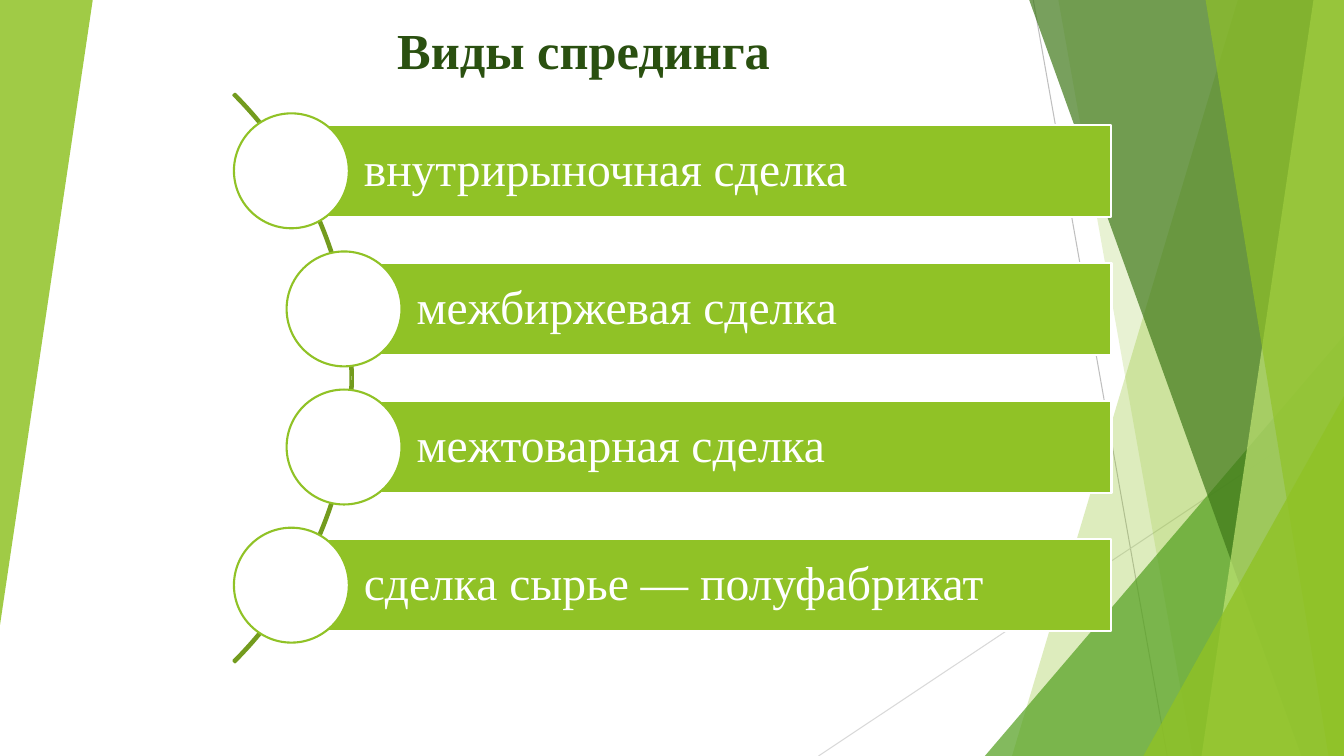
from dataclasses import dataclass

from pptx import Presentation
from pptx.dml.color import RGBColor
from pptx.enum.shapes import MSO_CONNECTOR, MSO_SHAPE
from pptx.enum.text import MSO_ANCHOR, PP_ALIGN
from pptx.oxml.ns import qn
from pptx.shapes.autoshape import Shape
from pptx.slide import Slide
from pptx.util import Emu, Inches, Pt
from lxml.etree import SubElement

WHITE = RGBColor(0xFF, 0xFF, 0xFF)
LIME = RGBColor(0x90, 0xC2, 0x26)
PALE_LIME = RGBColor(0xC0, 0xE4, 0x74)
GREEN = RGBColor(0x54, 0xA0, 0x21)
DARK_GREEN = RGBColor(0x3F, 0x78, 0x19)
TITLE_GREEN = RGBColor(0x2A, 0x50, 0x10)
ARC_GREEN = RGBColor(0x73, 0x9B, 0x1E)
GREY = RGBColor(0xBF, 0xBF, 0xBF)
LIGHT_GREY = RGBColor(0xD9, 0xD9, 0xD9)

FONT = "Times New Roman"
WIDTH, HEIGHT = Inches(13.33), Inches(7.5)

# All positions are percentages of the slide's width and height.
FIRST_BAR_TOP = 16.53
BAR_PITCH = 18.27
BAR_HEIGHT = 12.13
BAR_RIGHT = 82.7
OUTER_LEFT, INNER_LEFT = 21.68, 25.6
CIRCLE_WIDTH, CIRCLE_HEIGHT = 8.55, 15.2


@dataclass(frozen=True)
class Ray:
    start: tuple[float, float]
    end: tuple[float, float]
    color: RGBColor


@dataclass(frozen=True)
class Panel:
    """A full-height panel that reaches the right edge of the slide."""
    top_left: float
    bottom_left: float
    color: RGBColor
    opacity: int


@dataclass(frozen=True)
class Corner:
    """A right triangle in a corner of the slide."""
    box: tuple[float, float, float, float]
    color: RGBColor
    opacity: int
    rotation: int = 0


@dataclass(frozen=True)
class Deal:
    name: str
    left: float


RAYS = [
    Ray((76.88, 0), (86.85, 100), GREY),
    Ray((100, 53.73), (60.9, 100), LIGHT_GREY),
]
DECORATIONS = [
    Panel(92.1, 75.3, LIME, 30),
    Panel(78.75, 88.73, LIME, 20),
    Corner((73.28, 44.4, 26.72, 55.6), GREEN, 72),
    Panel(76.58, 96.83, DARK_GREEN, 70),
    Panel(97.73, 89.4, PALE_LIME, 70),
    Panel(89.7, 98.85, LIME, 65),
    Corner((85.07, 52.4, 14.93, 47.6), LIME, 80),
    Corner((0, 0, 6.9, 82.67), LIME, 85, rotation=180),
]
DEALS = [
    Deal("внутрирыночная сделка", OUTER_LEFT),
    Deal("межбиржевая сделка", INNER_LEFT),
    Deal("межтоварная сделка", INNER_LEFT),
    Deal("сделка сырье — полуфабрикат", OUTER_LEFT),
]


def across(percent: float) -> Emu:
    return Emu(round(WIDTH * percent / 100))


def down(percent: float) -> Emu:
    return Emu(round(HEIGHT * percent / 100))


def add_preset(slide: Slide, kind: MSO_SHAPE, left: float, top: float,
               width: float, height: float) -> Shape:
    shape = slide.shapes.add_shape(kind, across(left), down(top), across(width), down(height))
    shape.shadow.inherit = False
    return shape


def paint(shape: Shape, fill: RGBColor, line: RGBColor) -> None:
    shape.fill.solid()
    shape.fill.fore_color.rgb = fill
    shape.line.color.rgb = line
    shape.line.width = Pt(1.5)


def tint(shape: Shape, color: RGBColor, opacity: int) -> None:
    """Give a shape a see-through fill without an outline."""
    shape.shadow.inherit = False
    shape.fill.solid()
    shape.fill.fore_color.rgb = color
    shape.line.fill.background()
    color_element = shape._element.spPr.find(qn("a:solidFill")).find(qn("a:srgbClr"))
    SubElement(color_element, qn("a:alpha")).set("val", str(opacity * 1000))


def add_ray(slide: Slide, ray: Ray) -> None:
    (start_x, start_y), (end_x, end_y) = ray.start, ray.end
    connector = slide.shapes.add_connector(
        MSO_CONNECTOR.STRAIGHT, across(start_x), down(start_y), across(end_x), down(end_y))
    connector.line.color.rgb = ray.color
    connector.line.width = Pt(0.75)
    SubElement(connector._element.spPr, qn("a:effectLst"))


def add_decoration(slide: Slide, item: Panel | Corner) -> None:
    if isinstance(item, Panel):
        builder = slide.shapes.build_freeform(across(item.top_left), 0)
        builder.add_line_segments(
            [(WIDTH, 0), (WIDTH, HEIGHT), (across(item.bottom_left), HEIGHT)], close=True)
        shape = builder.convert_to_shape()
    else:
        shape = add_preset(slide, MSO_SHAPE.ISOSCELES_TRIANGLE, *item.box)
        shape.adjustments[0] = 1
        shape.rotation = item.rotation
    tint(shape, item.color, item.opacity)


def set_title(slide: Slide, text: str) -> None:
    title = slide.shapes.title
    title.left, title.top = across(8.63), down(2.13)
    title.width, title.height = across(69.6), down(9.07)
    text_frame = title.text_frame
    text_frame.text = text
    text_frame.vertical_anchor = MSO_ANCHOR.BOTTOM
    paragraph = text_frame.paragraphs[0]
    paragraph.alignment = PP_ALIGN.CENTER
    font = paragraph.runs[0].font
    font.name, font.size, font.bold = FONT, Pt(36), True
    font.color.rgb = TITLE_GREEN


def add_arc(slide: Slide) -> None:
    arc = add_preset(slide, MSO_SHAPE.BLOCK_ARC, -33.6, -3.2, 59.85, 106.4)
    for index, value in enumerate((189, 27, 0.003)):
        arc.adjustments[index] = value
    arc.fill.background()
    arc.line.color.rgb = ARC_GREEN
    arc.line.width = Pt(1.5)


def add_deal(slide: Slide, deal: Deal, row: int) -> None:
    """Draw a labelled bar with a circle centred on its left end."""
    top = FIRST_BAR_TOP + row * BAR_PITCH
    bar = add_preset(slide, MSO_SHAPE.RECTANGLE, deal.left, top, BAR_RIGHT - deal.left, BAR_HEIGHT)
    paint(bar, LIME, WHITE)
    text_frame = bar.text_frame
    text_frame.text = deal.name
    text_frame.word_wrap = True
    text_frame.vertical_anchor = MSO_ANCHOR.MIDDLE
    text_frame.margin_left = across(5.4)
    text_frame.margin_right = across(0.68)
    text_frame.margin_top = text_frame.margin_bottom = down(1.2)
    paragraph = text_frame.paragraphs[0]
    paragraph.alignment = PP_ALIGN.LEFT
    paragraph.line_spacing = 0.9
    font = paragraph.runs[0].font
    font.name, font.size = FONT, Pt(34)
    font.color.rgb = WHITE

    circle = add_preset(
        slide, MSO_SHAPE.OVAL, deal.left - CIRCLE_WIDTH / 2,
        top + (BAR_HEIGHT - CIRCLE_HEIGHT) / 2, CIRCLE_WIDTH, CIRCLE_HEIGHT)
    paint(circle, WHITE, LIME)


def main() -> None:
    presentation = Presentation()
    presentation.slide_width, presentation.slide_height = WIDTH, HEIGHT
    slide = presentation.slides.add_slide(presentation.slide_layouts.get_by_name("Title Only"))
    set_title(slide, "Виды спрединга")
    for ray in RAYS:
        add_ray(slide, ray)
    for item in DECORATIONS:
        add_decoration(slide, item)
    add_arc(slide)
    for row, deal in enumerate(DEALS):
        add_deal(slide, deal, row)
    presentation.save("out.pptx")


if __name__ == "__main__":
    main()
